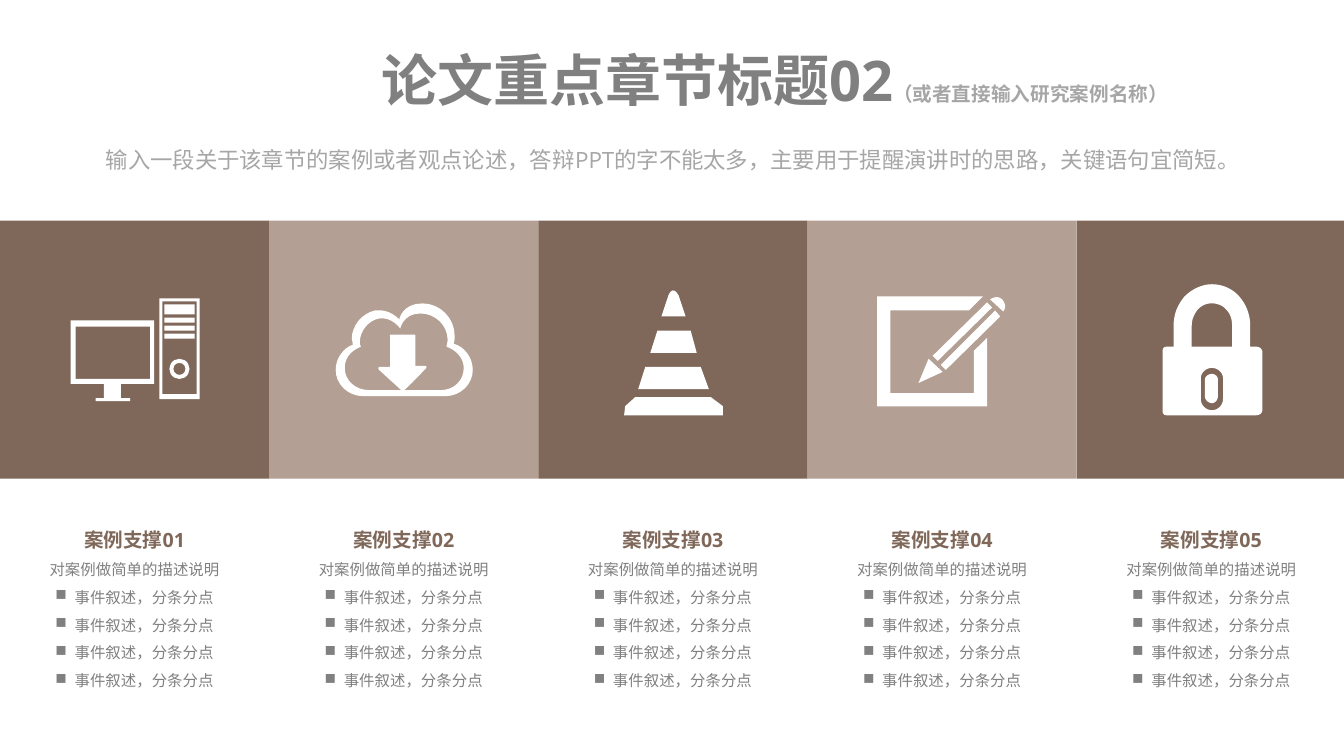
import pptx
import pptx.dml.color
import pptx.enum.shapes
import pptx.enum.text
import pptx.util
from lxml import etree
from pptx.util import Inches

BROWN = pptx.dml.color.RGBColor(0x7F, 0x68, 0x5A)
TAN = pptx.dml.color.RGBColor(0xB3, 0x9F, 0x93)
WHITE = pptx.dml.color.RGBColor(0xFF, 0xFF, 0xFF)
GRAY = pptx.dml.color.RGBColor(0x80, 0x80, 0x80)
LIGHT_GRAY = pptx.dml.color.RGBColor(0xA6, 0xA6, 0xA6)

FONT = "Open Sans"
PANEL_COUNT = 5
PANEL_WIDTH = 2.67
CURVE_STEPS = 8
SHAPE = pptx.enum.shapes.MSO_SHAPE

# In every contour a pair is a corner; six numbers are a Bézier curve
# (two control points, then the end point).
CONE = [
    [(7.17, 4.12), (6.19, 4.12), (6.2, 4.03), (6.3, 3.94), (7.05, 3.94), (7.17, 4.03)],
    [(6.33, 3.86), (6.4, 3.64), (6.95, 3.64), (7.03, 3.86)],
    [(6.45, 3.5), (6.52, 3.28), (6.85, 3.28), (6.91, 3.5)],
    [(6.63, 2.93), (6.63, 2.93, 6.67, 2.82, 6.73, 2.93), (6.8, 3.14), (6.56, 3.14)],
]
CLOUD = [
    [(4.5, 3.41), (4.51, 3.38, 4.51, 3.36, 4.51, 3.33),
     (4.51, 3.16, 4.37, 3.01, 4.19, 3.01), (3.99, 3.01, 3.96, 3.17, 3.96, 3.17),
     (3.96, 3.17, 3.87, 3.06, 3.72, 3.08), (3.59, 3.11, 3.49, 3.23, 3.49, 3.36),
     (3.49, 3.37, 3.5, 3.4, 3.5, 3.42), (3.41, 3.45, 3.33, 3.55, 3.33, 3.67),
     (3.33, 3.81, 3.45, 3.93, 3.6, 3.93), (4.42, 3.93),
     (4.57, 3.93, 4.69, 3.81, 4.69, 3.67), (4.69, 3.55, 4.61, 3.44, 4.5, 3.41)],
    [(4.37, 3.87), (4.01, 3.87), (4.04, 3.85, 4.22, 3.66, 4.22, 3.66),
     (4.22, 3.66, 4.25, 3.63, 4.21, 3.63), (4.12, 3.63), (4.12, 3.33),
     (4.12, 3.33, 4.12, 3.32, 4.11, 3.32), (3.88, 3.32),
     (3.86, 3.32, 3.87, 3.34, 3.87, 3.34), (3.87, 3.64), (3.77, 3.64),
     (3.74, 3.64, 3.76, 3.67, 3.76, 3.67), (3.98, 3.87), (3.66, 3.87),
     (3.53, 3.87, 3.42, 3.78, 3.42, 3.65), (3.42, 3.55, 3.48, 3.48, 3.58, 3.44),
     (3.57, 3.42, 3.57, 3.41, 3.57, 3.39), (3.57, 3.29, 3.65, 3.18, 3.76, 3.16),
     (3.89, 3.14, 3.97, 3.26, 3.97, 3.26), (3.97, 3.26, 4, 3.11, 4.17, 3.11),
     (4.32, 3.11, 4.44, 3.23, 4.44, 3.37), (4.44, 3.4, 4.43, 3.42, 4.43, 3.44),
     (4.52, 3.47, 4.6, 3.55, 4.6, 3.65), (4.6, 3.78, 4.5, 3.87, 4.37, 3.87)],
]
PENCIL_PARTS = [
    [(9.35, 3.69), (9.21, 3.56), (9.11, 3.8)],
    [(9.79, 3), (9.25, 3.53), (9.3, 3.58), (9.84, 3.05)],
    [(9.33, 3.62), (9.38, 3.67), (9.92, 3.14), (9.87, 3.08)],
    [(9.94, 2.97), (9.89, 2.92, 9.82, 2.97, 9.82, 2.97), (9.95, 3.09),
     (9.95, 3.09, 10, 3.04, 9.94, 2.97)],
]
NOTE_FRAME = [(9.66, 3.9), (8.83, 3.9), (8.83, 3.08), (9.61, 3.08), (9.75, 2.94),
              (8.7, 2.94), (8.7, 4.03), (9.79, 4.03), (9.79, 3.35), (9.66, 3.48)]
PADLOCK = [
    [(12.46, 3.44), (12.4, 3.44), (12.4, 3.23), (12.4, 3.12, 12.36, 3.02, 12.29, 2.94),
     (12.23, 2.87, 12.13, 2.82, 12.02, 2.82), (11.92, 2.82, 11.82, 2.87, 11.75, 2.94),
     (11.68, 3.02, 11.64, 3.12, 11.64, 3.23), (11.64, 3.44), (11.57, 3.44),
     (11.54, 3.44, 11.53, 3.46, 11.53, 3.49), (11.53, 4.07),
     (11.53, 4.1, 11.54, 4.12, 11.57, 4.12), (12.46, 4.12),
     (12.49, 4.12, 12.52, 4.1, 12.52, 4.07), (12.52, 3.49),
     (12.52, 3.46, 12.49, 3.44, 12.46, 3.44)],
    [(12.13, 3.96), (12.13, 4.02, 12.08, 4.07, 12.02, 4.07),
     (11.96, 4.07, 11.91, 4.02, 11.91, 3.96), (11.91, 3.75),
     (11.91, 3.7, 11.96, 3.65, 12.02, 3.65), (12.08, 3.65, 12.13, 3.7, 12.13, 3.75)],
    [(12.22, 3.44), (11.82, 3.44), (11.82, 3.23), (11.82, 3.16, 11.85, 3.11, 11.88, 3.07),
     (11.92, 3.03, 11.96, 3.01, 12.02, 3.01), (12.07, 3.01, 12.13, 3.03, 12.16, 3.07),
     (12.2, 3.11, 12.22, 3.16, 12.22, 3.23)],
]
KEYHOLE = [(12.02, 3.71), (11.99, 3.71, 11.95, 3.73, 11.95, 3.77), (11.95, 3.93),
           (11.95, 3.97, 11.99, 4, 12.02, 4), (12.05, 4, 12.08, 3.97, 12.08, 3.93),
           (12.08, 3.77), (12.08, 3.73, 12.05, 3.71, 12.02, 3.71)]
MONITOR = [
    [(0.7, 3.18), (0.7, 3.81), (1.03, 3.81), (1.03, 3.95), (0.95, 3.95), (0.95, 3.98),
     (1.29, 3.98), (1.29, 3.95), (1.2, 3.95), (1.2, 3.81), (1.53, 3.81), (1.53, 3.18)],
    [(1.49, 3.76), (0.75, 3.76), (0.75, 3.24), (1.49, 3.24)],
]
TOWER = [
    [(1.58, 2.96), (1.58, 3.96), (1.98, 3.96), (1.98, 2.96)],
    [(1.95, 3.91), (1.61, 3.91), (1.61, 2.99), (1.95, 2.99)],
]


def style_shape(shape, color):
    shape.shadow.inherit = False
    shape.fill.solid()
    shape.fill.fore_color.rgb = color
    shape.line.fill.background()


def add_preset(shapes, kind, left, top, width, height, color):
    shape = shapes.add_shape(kind, Inches(left), Inches(top), Inches(width), Inches(height))
    style_shape(shape, color)
    return shape


def flatten(contour):
    """Return the contour's points in EMU, with curves sampled as short lines."""
    points = [contour[0]]
    for step in contour[1:]:
        if len(step) == 2:
            points.append(step)
            continue
        start, controls = points[-1], (step[:2], step[2:4], step[4:])
        for index in range(1, CURVE_STEPS + 1):
            t = index / CURVE_STEPS
            weights = ((1 - t) ** 3, 3 * t * (1 - t) ** 2, 3 * t * t * (1 - t), t ** 3)
            points.append(tuple(
                sum(weight * point[axis] for weight, point in zip(weights, (start, *controls)))
                for axis in (0, 1)))
    return [(Inches(x), Inches(y)) for x, y in points]


def add_outline(shapes, contours):
    first, *others = [flatten(contour) for contour in contours]
    builder = shapes.build_freeform(*first[0])
    builder.add_line_segments(first[1:], close=True)
    for points in others:
        builder.move_to(*points[0])
        builder.add_line_segments(points[1:], close=True)
    style_shape(builder.convert_to_shape(), WHITE)


def add_computer(slide):
    shapes = slide.shapes.add_group_shape().shapes
    add_outline(shapes, MONITOR)
    add_outline(shapes, TOWER)
    for top, height in ((3.02, 0.1), (3.15, 0.05), (3.23, 0.05), (3.31, 0.05)):
        add_preset(shapes, SHAPE.RECTANGLE, 1.63, top, 0.3, height, WHITE)
    button = add_preset(shapes, SHAPE.DONUT, 1.68, 3.56, 0.2, 0.2, WHITE)
    button.adjustments[0] = 0.2


def add_icons(slide):
    add_computer(slide)
    add_outline(slide.shapes, CLOUD)
    add_outline(slide.shapes, CONE)
    for contour_sets in ([[part] for part in PENCIL_PARTS] + [[NOTE_FRAME]],
                         [PADLOCK, [KEYHOLE]]):
        shapes = slide.shapes.add_group_shape().shapes
        for contours in contour_sets:
            add_outline(shapes, contours)


def format_frame(shape, anchor=pptx.enum.text.MSO_ANCHOR.TOP):
    frame = shape.text_frame
    frame.word_wrap = True
    frame.auto_size = pptx.enum.text.MSO_AUTO_SIZE.SHAPE_TO_FIT_TEXT
    frame.vertical_anchor = anchor
    frame.margin_left = frame.margin_right = Inches(0.07)
    frame.margin_top = frame.margin_bottom = Inches(0.03)
    return frame


def add_run(paragraph, text, size, color, bold=False):
    paragraph.alignment = pptx.enum.text.PP_ALIGN.CENTER
    run = paragraph.add_run()
    run.text = text
    run.font.name = FONT
    run.font.size = pptx.util.Pt(size)
    run.font.bold = bold
    run.font.color.rgb = color


def add_bullet(paragraph):
    properties = paragraph._p.get_or_add_pPr()
    properties.set("marL", str(Inches(0.19)))
    properties.set("indent", str(-Inches(0.19)))
    bullet = etree.SubElement(properties, pptx.oxml.ns.qn("a:buChar"))
    bullet.set("char", "■")


def add_title(slide):
    title = slide.shapes.title
    title.left, title.top = Inches(-0.01), Inches(0.42)
    title.width, title.height = Inches(13.37), Inches(0.74)
    frame = format_frame(title)
    frame.margin_left = Inches(2.09)
    paragraph = frame.paragraphs[0]
    add_run(paragraph, "论文重点章节标题02", 40, GRAY, bold=True)
    add_run(paragraph, "（或者直接输入研究案例名称）", 14, LIGHT_GRAY, bold=True)


def add_summary(slide):
    box = slide.shapes.add_textbox(Inches(0.81), Inches(1.41), Inches(11.73), Inches(0.34))
    frame = format_frame(box, pptx.enum.text.MSO_ANCHOR.MIDDLE)
    add_run(frame.paragraphs[0],
            "输入一段关于该章节的案例或者观点论述，答辩PPT的字不能太多，"
            "主要用于提醒演讲时的思路，关键语句宜简短。", 16, LIGHT_GRAY)


def add_case(slide, number, left):
    box = slide.shapes.add_textbox(Inches(left), Inches(4.97), Inches(2.33), Inches(1.93))
    frame = format_frame(box)
    heading = frame.paragraphs[0]
    heading.line_spacing = 2.0
    add_run(heading, f"案例支撑{number:02d}", 14, BROWN, bold=True)
    for index, text in enumerate(["对案例做简单的描述说明"] + ["事件叙述，分条分点"] * 4):
        paragraph = frame.add_paragraph()
        paragraph.line_spacing = 1.5
        add_run(paragraph, text, 11, GRAY)
        if index > 0:
            add_bullet(paragraph)


def main():
    presentation = pptx.Presentation()
    presentation.slide_width = Inches(13.33)
    presentation.slide_height = Inches(7.5)
    slide = presentation.slides.add_slide(presentation.slide_layouts[5])
    add_title(slide)
    add_summary(slide)
    for index in range(PANEL_COUNT):
        left = index * PANEL_WIDTH
        color = TAN if index % 2 else BROWN
        add_preset(slide.shapes, SHAPE.RECTANGLE, left, 2.19, PANEL_WIDTH, 2.56, color)
        add_case(slide, index + 1, left + 0.17)
    add_icons(slide)
    presentation.save("out.pptx")


if __name__ == "__main__":
    main()
